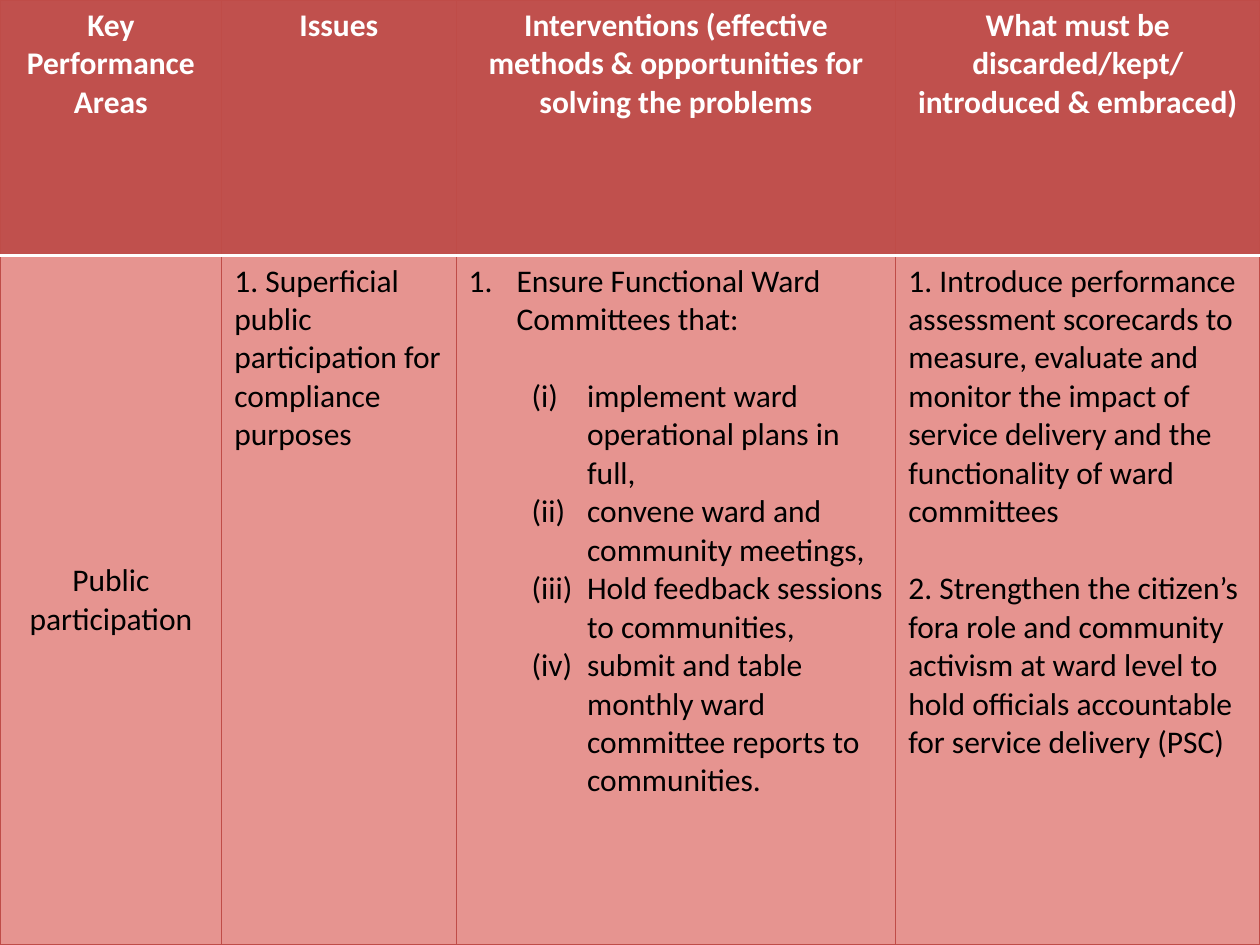
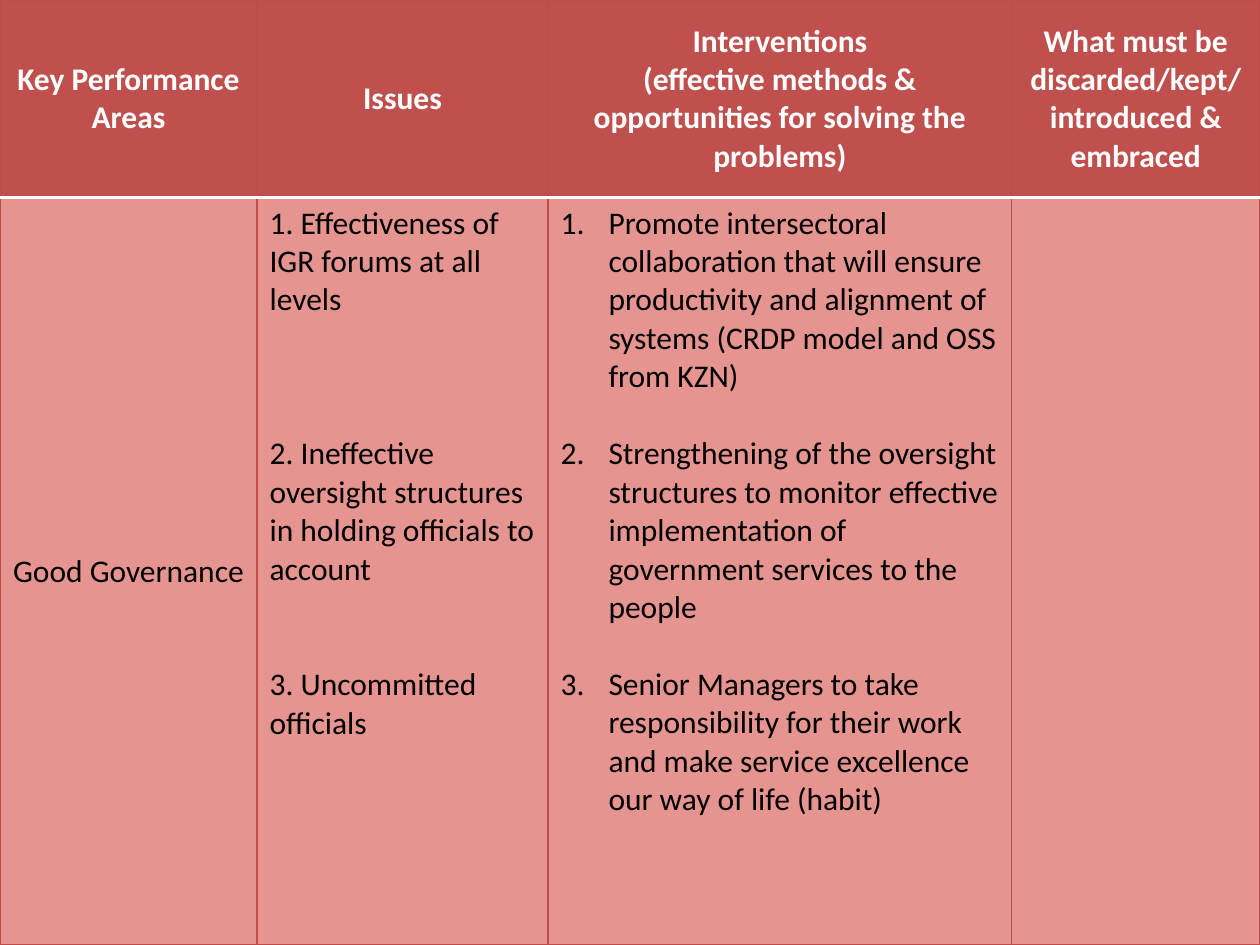
import pptx
import pptx.util
import pptx.dml.color
import pptx.enum.text
import pptx.oxml
import pptx.oxml.ns

Inches, Pt = pptx.util.Inches, pptx.util.Pt
PP, MSO = pptx.enum.text.PP_ALIGN, pptx.enum.text.MSO_ANCHOR
FONT, SIZE, LINE = "Calibri", 18, 22
HEAD, BODY, EDGE, WHITE, BLACK = "C0504D", "E69490", "BF4C48", "FFFFFF", "000000"
LISTS = {"num": ("arabicPeriod", 0, 0.38, -0.38),
         "roman": ("romanLcParenBoth", 1, 0.94, -0.44)}


def color(code):
    """Turn a hex string into a colour."""
    return pptx.dml.color.RGBColor.from_string(code)


def border(cell, side, code, width):
    """Draw one side of a cell."""
    cell._tc.get_or_add_tcPr().append(pptx.oxml.parse_xml(
        f'<a:ln{side} {pptx.oxml.ns.nsdecls("a")} w="{Pt(width)}"><a:solidFill>'
        f'<a:srgbClr val="{code}"/></a:solidFill></a:ln{side}>'))


def number(para, kind):
    """Number a paragraph with a hanging indent."""
    style, level, left, hang = LISTS[kind]
    para.level = level
    props = para._p.get_or_add_pPr()
    props.set("marL", str(Inches(left)))
    props.set("indent", str(Inches(hang)))
    props.append(pptx.oxml.parse_xml(
        f'<a:buAutoNum {pptx.oxml.ns.nsdecls("a")} type="{style}"/>'))


def write(cell, items, ink, bold, align):
    """Write items of text, blank lines above and list kind into a cell."""
    frame = cell.text_frame
    for i, (text, gap, kind) in enumerate(items):
        para = frame.add_paragraph() if i else frame.paragraphs[0]
        para.alignment = align
        para.space_before = Pt(gap * LINE)
        if kind:
            number(para, kind)
        run = para.add_run()
        run.text = text
        font = run.font
        font.name, font.size, font.bold = FONT, Pt(SIZE), bold
        font.color.rgb = color(ink)


def paint(cell, head):
    """Give a cell its borders and fill."""
    for side in "LRTB":
        rule = side == ("B" if head else "T")
        border(cell, side, WHITE if rule else EDGE, 2 if rule else 0.75)
    cell.fill.solid()
    cell.fill.fore_color.rgb = color(HEAD if head else BODY)


def grid(slide, box, cols, rows, heads, bodies, anchor):
    """Place a table with a header row and one body row."""
    table = slide.shapes.add_table(2, len(cols), *map(Inches, box)).table
    table.horz_banding = False
    for col, width in zip(table.columns, cols):
        col.width = Inches(width)
    for row, height in zip(table.rows, rows):
        row.height = Inches(height)
    for i, (head, body) in enumerate(zip(heads, bodies)):
        top, low = table.cell(0, i), table.cell(1, i)
        paint(top, True)
        paint(low, False)
        top.vertical_anchor = anchor
        low.vertical_anchor = MSO.TOP if i else MSO.MIDDLE
        write(top, [(text, 0, None) for text in head], WHITE, True, PP.CENTER)
        write(low, body, BLACK, False, PP.LEFT if i else PP.CENTER)


def public(slide, box):
    """Fill the public participation slide."""
    heads = [["Key Performance Areas"], ["Issues"],
             ["Interventions (effective methods & opportunities for solving the problems"],
             ["What must be discarded/kept/ introduced & embraced)"]]
    bodies = [
        [("Public participation", 0, None)],
        [("1. Superficial public participation for compliance purposes", 0, None)],
        [("Ensure Functional Ward Committees that:", 0, "num"),
         ("implement ward operational plans in full,", 1, "roman"),
         ("convene ward and community meetings,", 0, "roman"),
         ("Hold feedback sessions to communities,", 0, "roman"),
         ("submit and table monthly ward committee reports to communities.", 0, "roman")],
        [("1. Introduce performance assessment scorecards to measure, evaluate and monitor "
          "the impact of service delivery and the functionality of ward committees", 0, None),
         ("2. Strengthen the citizen’s fora role and community activism at ward level to "
          "hold officials accountable for service delivery (PSC)", 1, None)]]
    grid(slide, box, [1.76, 1.86, 3.49, 2.89], [2.03, 5.47], heads, bodies, MSO.TOP)


def govern(slide, box):
    """Fill the good governance slide."""
    heads = [["Key Performance Areas"], ["Issues"],
             ["Interventions", "(effective methods & opportunities for solving the problems)"],
             ["What must be discarded/kept/ introduced & embraced"]]
    bodies = [
        [("Good Governance", 0, None)],
        [("1. Effectiveness of IGR forums at all levels", 0, None),
         ("2. Ineffective oversight structures in holding officials to account", 3, None),
         ("3. Uncommitted officials", 2, None)],
        [("Promote intersectoral collaboration that will ensure productivity and alignment "
          "of systems (CRDP model and OSS from KZN)", 0, "num"),
         ("Strengthening of the oversight structures to monitor effective implementation "
          "of government services to the people", 1, "num"),
         ("Senior Managers to take responsibility for their work and make service "
          "excellence our way of life (habit)", 1, "num")],
        []]
    grid(slide, box, [2.04, 2.31, 3.68, 1.97], [1.57, 5.93], heads, bodies, MSO.MIDDLE)


def main():
    """Build and save the deck."""
    deck = pptx.Presentation()
    deck.slide_width, deck.slide_height = Inches(10), Inches(7.5)
    for fill in (public, govern):
        fill(deck.slides.add_slide(deck.slide_layouts[6]), (0, 0, 10, 7.5))
    deck.save("out.pptx")


if __name__ == "__main__":
    main()
